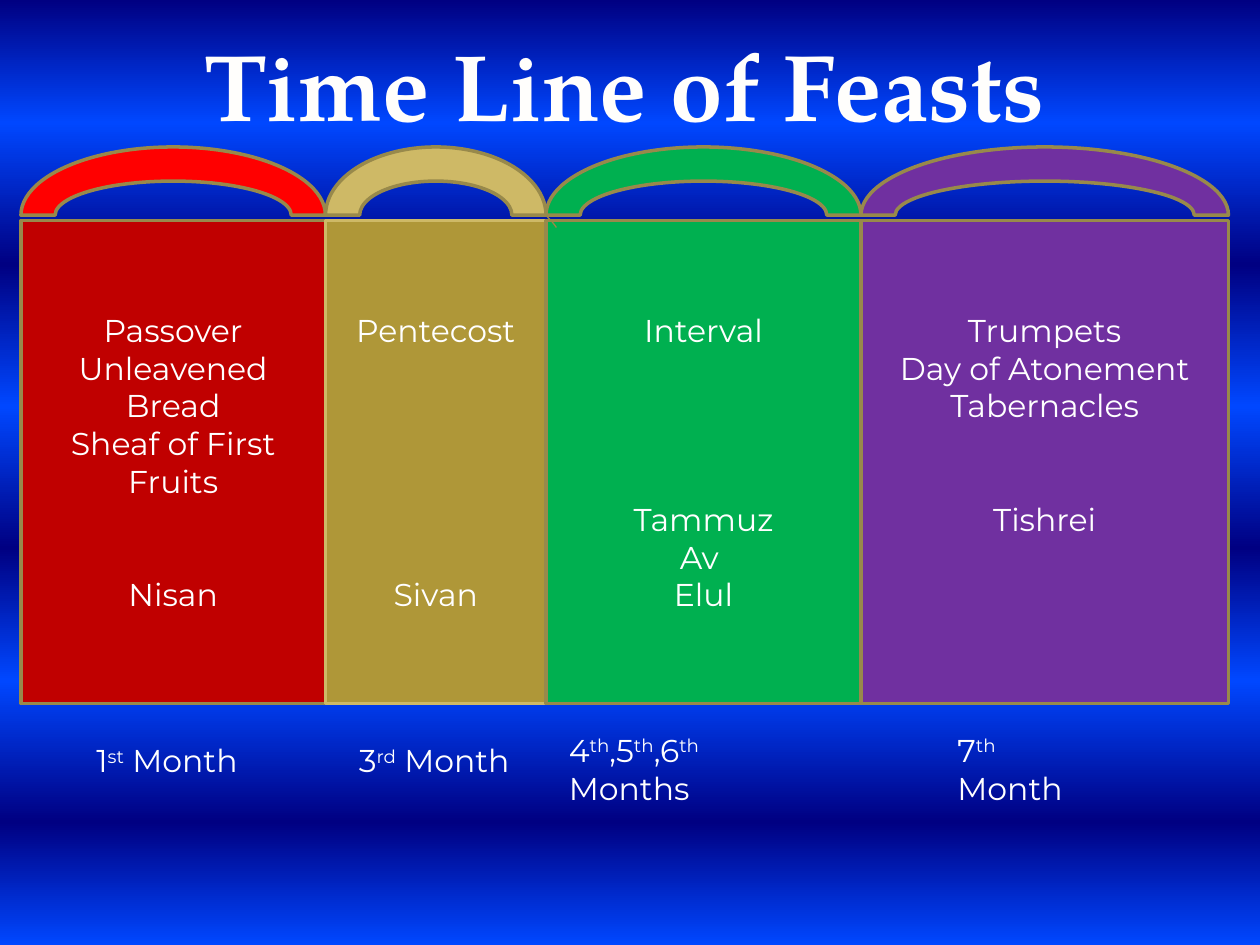
from lxml.etree import SubElement
from pptx import Presentation
from pptx.dml.color import RGBColor
from pptx.enum.shapes import MSO_SHAPE
from pptx.enum.text import MSO_ANCHOR, MSO_AUTO_SIZE, PP_ALIGN
from pptx.oxml.ns import qn
from pptx.util import Pt

COLORS = {
    "white": "FFFFFF", "title": "FFFEFC", "navy": "000082", "blue": "0047FF",
    "dark red": "C00000", "red": "FF0000", "dark gold": "AF9738", "gold": "CEB966",
    "green": "00B050", "purple": "7030A0", "olive": "98894B", "tick": "998946",
}
LINE_HEIGHT = 21.6
BAND_TOP, BAND_HEIGHT = 126, 276
ARCH_TOP, ARCH_HEIGHT = 84, 78

# left, right, box fill, box line, arch fill, feasts, empty lines, months, empty lines below
PERIODS = [
    (12, 186, "dark red", "olive", "red",
     ["Passover", "Unleavened Bread", "Sheaf of First Fruits"], 2, ["Nisan"], 0),
    (186, 312, "dark gold", "gold", "gold", ["Pentecost"], 6, ["Sivan"], 0),
    (312, 492, "green", "olive", "green", ["Interval"], 4, ["Tammuz", "Av ", "Elul"], 0),
    (492, 702, "purple", "olive", "purple",
     ["Trumpets", "Day of Atonement", "Tabernacles"], 2, ["Tishrei"], 2),
]
# left, top, width, height, wrap, text pieces (every second one is raised)
MONTH_LABELS = [
    (48, 420, 107, 29, False, ["1", "st", " Month"]),
    (198, 420, 108, 29, False, ["3", "rd", " Month"]),
    (318, 414, 150, 51, True, ["4", "th", ",5", "th", ",6", "th", " Months"]),
    (540, 414, 96, 51, True, ["7", "th", " Month"]),
]


def add_outlined(kind, left, top, width, height, fill, line, weight=2):
    shape = page.shapes.add_shape(kind, Pt(left), Pt(top), Pt(width), Pt(height))
    shape.shadow.inherit = False
    if fill:
        shape.fill.solid()
        shape.fill.fore_color.rgb = RGBColor.from_string(COLORS[fill])
    else:
        shape.fill.background()
    shape.line.color.rgb = RGBColor.from_string(COLORS[line])
    shape.line.width = Pt(weight)
    return shape


def set_font(para, size=18, name="Montserrat", color="white"):
    para.font.size = Pt(size)
    para.font.name = name
    para.font.color.rgb = RGBColor.from_string(COLORS[color])


deck = Presentation()
deck.slide_width, deck.slide_height = Pt(720), Pt(540)
page = deck.slides.add_slide(deck.slide_layouts[6])

# Striped background
background = page.background.fill
background.gradient()
background.gradient_angle = 270
stops = page._element.find(".//" + qn("a:gsLst"))
for stop in list(stops):
    stops.remove(stop)
for index, position in enumerate([0, 13, 28, 43, 58, 72, 87, 100]):
    stop = SubElement(stops, qn("a:gs"), pos=str(position * 1000))
    SubElement(stop, qn("a:srgbClr"), val=COLORS["blue" if index % 2 else "navy"])

# Period boxes
for left, right, fill, line, _, feasts, gap, months, below in PERIODS:
    box = add_outlined(MSO_SHAPE.RECTANGLE, left, BAND_TOP, right - left, BAND_HEIGHT, fill, line)
    frame = box.text_frame
    frame.word_wrap = True
    frame.vertical_anchor = MSO_ANCHOR.MIDDLE
    frame.margin_bottom = Pt(3.6 + below * LINE_HEIGHT)
    for index, text in enumerate(feasts + months):
        para = frame.add_paragraph() if index else frame.paragraphs[0]
        para.text = text
        para.alignment = PP_ALIGN.CENTER
        set_font(para)
        if index == len(feasts):
            para.space_before = Pt(gap * LINE_HEIGHT)

# Arches over the boxes
tick = add_outlined(MSO_SHAPE.ARC, 252, 114, 72, 72, None, "tick", 0.75)
tick.adjustments[0], tick.adjustments[1] = 170.79, 195.79
for left, right, _, _, fill, *_ in PERIODS:
    arch = add_outlined(MSO_SHAPE.BLOCK_ARC, left, ARCH_TOP, right - left, ARCH_HEIGHT, fill, "olive")
    for index, value in enumerate([108, 0, 0.25]):
        arch.adjustments[index] = value

# Month labels
for left, top, width, height, wrap, pieces in MONTH_LABELS:
    label = page.shapes.add_textbox(Pt(left), Pt(top), Pt(width), Pt(height))
    label.text_frame.word_wrap = wrap
    label.text_frame.auto_size = MSO_AUTO_SIZE.SHAPE_TO_FIT_TEXT
    para = label.text_frame.paragraphs[0]
    set_font(para)
    for index, piece in enumerate(pieces):
        span = para.add_run()
        span.text = piece
        if index % 2:
            span._r.get_or_add_rPr().set("baseline", "30000")

# Title
title = page.shapes.add_textbox(Pt(106.5), Pt(12), Pt(500.5), Pt(72.7))
title.text_frame.word_wrap = False
title.text_frame.auto_size = MSO_AUTO_SIZE.SHAPE_TO_FIT_TEXT
para = title.text_frame.paragraphs[0]
para.text = "Time Line of Feasts"
para.alignment = PP_ALIGN.CENTER
set_font(para, 54, "TeX Gyre Pagella", "title")
para.font.bold = True

deck.save("out.pptx")
